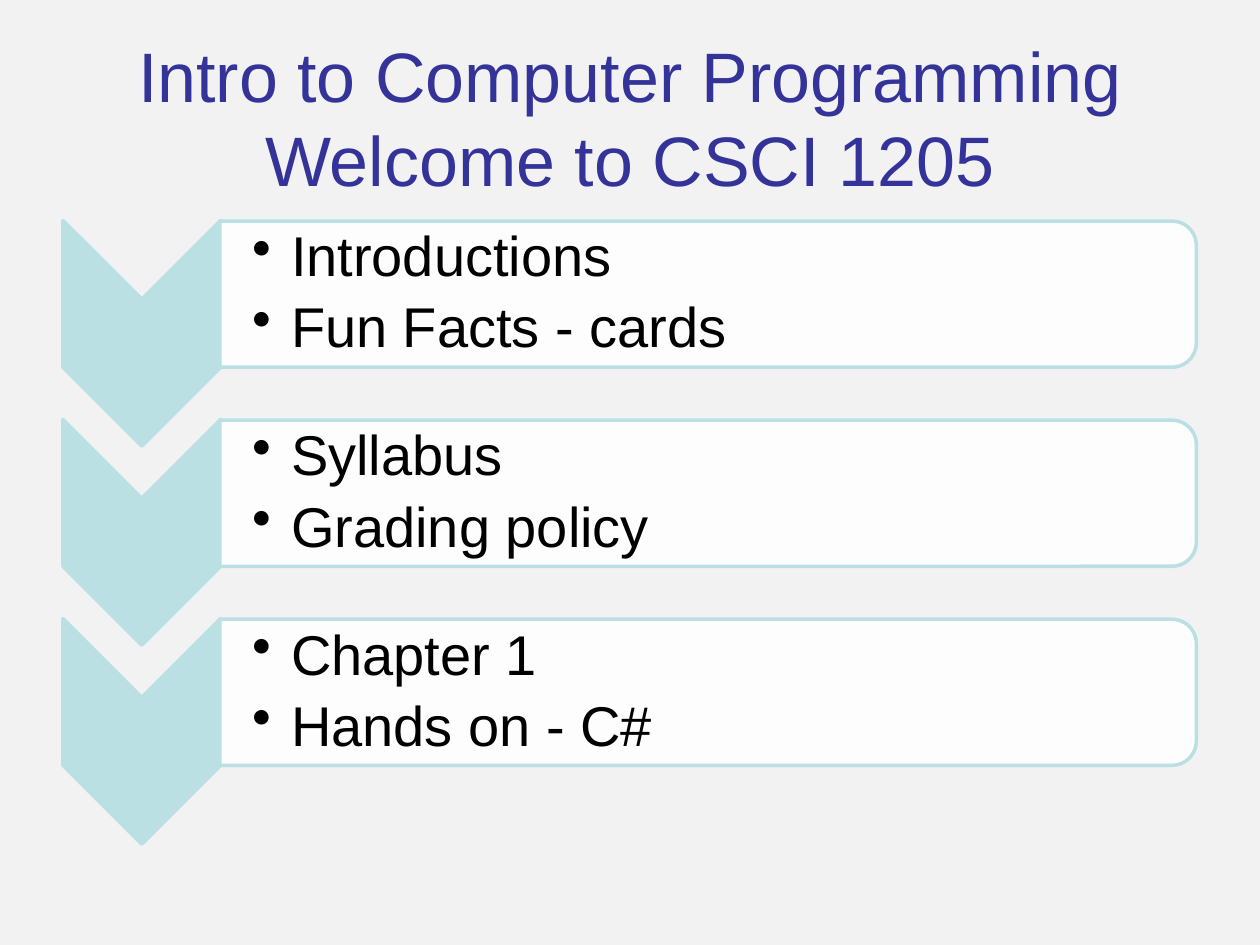
from dataclasses import dataclass

from pptx import Presentation
from pptx.dml.color import RGBColor as Rgb
from pptx.enum.shapes import MSO_SHAPE as Kind
from pptx.enum.text import MSO_ANCHOR as Anchor, PP_ALIGN as Align
from pptx.oxml.ns import qn
from pptx.shapes.autoshape import Shape
from pptx.slide import Slide
from pptx.text.text import TextFrame
from pptx.util import Inches, Pt
from lxml.etree import SubElement as Sub


@dataclass(frozen=True)
class Theme:
    back: Rgb = Rgb(0xF2, 0xF2, 0xF2)
    title: Rgb = Rgb(0x33, 0x33, 0x99)
    teal: Rgb = Rgb(0xBB, 0xE0, 0xE3)
    panel: Rgb = Rgb(0xFF, 0xFF, 0xFF)
    ink: Rgb = Rgb(0, 0, 0)
    font: str = "Arial"
    head: Pt = Pt(40)
    body: Pt = Pt(32)
    line: Pt = Pt(2)


@dataclass(frozen=True)
class Step:
    items: tuple[str, ...]


THEME = Theme()
TOP, PITCH = 1.75, 1.58
STEPS = (
    Step(("Introductions", "Fun Facts - cards")),
    Step(("Syllabus", "Grading policy")),
    Step(("Chapter 1", "Hands on - C#")),
)


def apply(obj: object, form: dict) -> None:
    for name, value in form.items():
        setattr(obj, name, value)


def add_text(slide: Slide, box: tuple[float, ...], inset: dict) -> TextFrame:
    frame = slide.shapes.add_textbox(*map(Inches, box)).text_frame
    apply(frame, {"word_wrap": True, "vertical_anchor": Anchor.MIDDLE, **inset})
    return frame


def add_turned(slide: Slide, kind: Kind, mid: tuple[float, float],
               size: tuple[float, float], fill: Rgb) -> Shape:
    """Add a shape turned a quarter clockwise about its centre."""
    (x, y), (wide, high) = mid, size
    shape = slide.shapes.add_shape(kind, Inches(x - wide / 2), Inches(y - high / 2),
                                   Inches(wide), Inches(high))
    shape.rotation = 90
    shape.shadow.inherit = False
    shape.fill.solid()
    shape.fill.fore_color.rgb = fill
    shape.line.color.rgb = THEME.teal
    shape.line.width = THEME.line
    return shape


def add_bullet(frame: TextFrame, index: int, text: str) -> None:
    para = frame.add_paragraph() if index else frame.paragraphs[0]
    para.text = text
    apply(para, {"level": 1, "line_spacing": 0.9, "space_after": Pt(6)})
    apply(para.font, {"name": THEME.font, "size": THEME.body})
    para.font.color.rgb = THEME.ink
    props = para._p.get_or_add_pPr()
    props.set("marL", str(Inches(0.31)))
    props.set("indent", str(Inches(-0.31)))
    mark = props.makeelement(qn("a:buChar"), {"char": "•"})
    props.find(qn("a:defRPr")).addprevious(mark)


def add_step(slide: Slide, step: Step, top: float) -> None:
    add_turned(slide, Kind.CHEVRON, (1.125, top + 0.895), (1.79, 1.25), THEME.teal)
    panel = add_turned(slide, Kind.ROUND_2_SAME_RECTANGLE, (5.62, top + 0.585),
                       (1.16, 7.75), THEME.panel)
    color = panel.fill._xPr.find(qn("a:solidFill"))[0]
    Sub(color, qn("a:alpha"), val="90000")
    thin = Inches(0.02)
    frame = add_text(slide, (1.75, top + 0.06, 7.69, 1.05),
                     {"margin_left": Inches(0.25), "margin_right": thin,
                      "margin_top": thin, "margin_bottom": thin})
    for index, text in enumerate(step.items):
        add_bullet(frame, index, text)


def main() -> None:
    deck = Presentation()
    apply(deck, {"slide_width": Inches(10), "slide_height": Inches(7.5)})
    slide = deck.slides.add_slide(deck.slide_layouts[6])
    slide.background.fill.solid()
    slide.background.fill.fore_color.rgb = THEME.back

    # Title
    para = add_text(slide, (0.5, 0.3, 9, 1.25), {}).paragraphs[0]
    para.text = "Intro to Computer Programming\vWelcome to CSCI 1205"
    para.alignment = Align.CENTER
    apply(para.font, {"name": THEME.font, "size": THEME.head})
    para.font.color.rgb = THEME.title

    # Steps, evenly spaced down the slide
    for index, step in enumerate(STEPS):
        add_step(slide, step, TOP + index * PITCH)

    deck.save("out.pptx")


if __name__ == "__main__":
    main()
